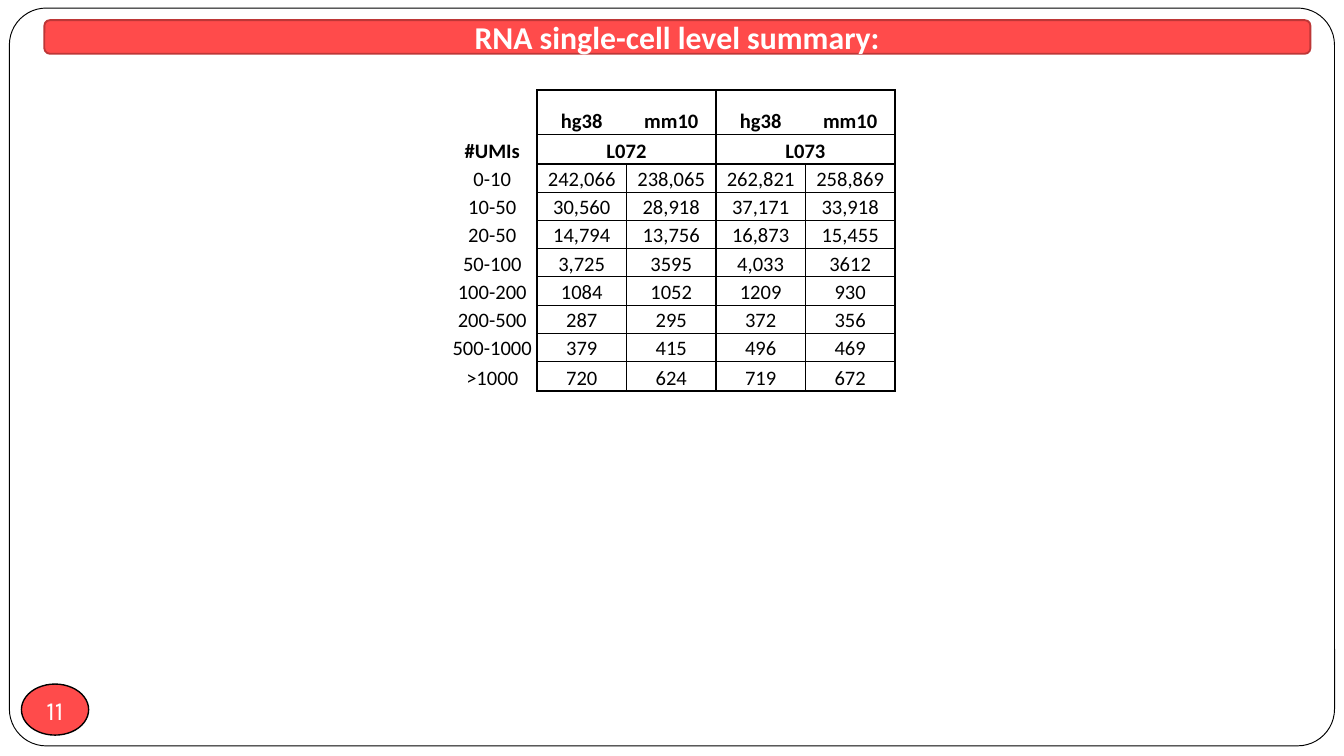
"""Build a slide that tabulates cell counts by number of RNA UMIs."""
import pptx
import pptx.dml.color
import pptx.enum.shapes
import pptx.enum.text
import pptx.oxml
import pptx.oxml.ns
import pptx.util

Inches = pptx.util.Inches
Pt = pptx.util.Pt
Shape = pptx.enum.shapes.MSO_SHAPE
Anchor = pptx.enum.text.MSO_ANCHOR

COLORS = {"white": "FFFFFF", "black": "000000", "red": "FF4B4B", "dark_red": "BD3737"}
PLAIN_TABLE_STYLE = "{2D5ABB26-0587-4C30-8999-92F81FD0307C}"
THICK, THIN = 1, 0.5
GENOMES = ["hg38", "mm10"]
ROWS = [
    ["", *GENOMES, *GENOMES],
    ["#UMIs", "L072", "", "L073", ""],
    ["0-10", "242,066", "238,065", "262,821", "258,869"],
    ["10-50", "30,560", "28,918", "37,171", "33,918"],
    ["20-50", "14,794", "13,756", "16,873", "15,455"],
    ["50-100", "3,725", "3595", "4,033", "3612"],
    ["100-200", "1084", "1052", "1209", "930"],
    ["200-500", "287", "295", "372", "356"],
    ["500-1000", "379", "415", "496", "469"],
    [">1000", "720", "624", "719", "672"],
]
LIBRARY_ROW = 1
HEADER_ROWS = 2
LIBRARY_COLUMNS = [1, 3]
ROW_HEIGHTS = [0.33, 0.22] + [0.21] * 7 + [0.22]


def rgb(name):
    return pptx.dml.color.RGBColor.from_string(COLORS[name])


def write_text(text_frame, text, size=11, font="Calibri", color="black", bold=False):
    paragraph = text_frame.paragraphs[0]
    paragraph.alignment = pptx.enum.text.PP_ALIGN.CENTER
    run = paragraph.add_run()
    run.text = text
    run.font.size = Pt(size)
    run.font.name = font
    run.font.bold = bold
    run.font.color.rgb = rgb(color)


def add_box(slide, preset, left, top, width, height, fill, line, line_width):
    shape = slide.shapes.add_shape(
        preset, Inches(left), Inches(top), Inches(width), Inches(height))
    shape.shadow.inherit = False
    shape.fill.solid()
    shape.fill.fore_color.rgb = rgb(fill)
    shape.line.color.rgb = rgb(line)
    shape.line.width = Pt(line_width)
    shape.text_frame.vertical_anchor = Anchor.MIDDLE
    return shape


def add_frame(slide):
    frame = add_box(slide, Shape.ROUNDED_RECTANGLE, 0.07, 0.06, 9.86, 5.49,
                    "white", "black", 0.5)
    frame.adjustments[0] = 0.05


def add_page_number(slide, number):
    badge = add_box(slide, Shape.OVAL, 0.16, 5.09, 0.5, 0.38, "red", "black", 0.75)
    text_frame = badge.text_frame
    text_frame.margin_left = text_frame.margin_right = 0
    text_frame.margin_top = text_frame.margin_bottom = 0
    text_frame.word_wrap = False
    write_text(text_frame, number, size=14, font="Karla", color="white")


def add_title(slide, text):
    banner = add_box(slide, Shape.ROUNDED_RECTANGLE, 0.33, 0.15, 9.42, 0.25,
                     "red", "dark_red", 1)
    write_text(banner.text_frame, text, size=17, color="white", bold=True)


def border_widths(row, column):
    """Return the left, right, top and bottom line widths of a cell, 0 for none."""
    if column == 0:
        return 0, THICK, 0, 0
    if row == LIBRARY_ROW:
        return THICK, THICK, THICK, THICK
    inner = THIN if row >= HEADER_ROWS else 0
    starts_library = column in LIBRARY_COLUMNS
    left = THICK if starts_library else inner
    right = inner if starts_library else THICK
    top = THICK if row <= HEADER_ROWS else THIN
    bottom = THICK if row < HEADER_ROWS or row == len(ROWS) - 1 else THIN
    return left, right, top, bottom


def set_borders(cell, widths):
    properties = cell._tc.get_or_add_tcPr()
    for side, width in zip("LRTB", widths):
        paint = (f'<a:solidFill><a:srgbClr val="{COLORS["black"]}"/></a:solidFill>'
                 if width else "<a:noFill/>")
        properties.append(pptx.oxml.parse_xml(
            f'<a:ln{side} {pptx.oxml.ns.nsdecls("a")} w="{Pt(width)}">{paint}</a:ln{side}>'))


def fill_cell(cell, text, row, column):
    cell.margin_left = cell.margin_right = cell.margin_top = Inches(0.01)
    cell.margin_bottom = 0
    cell.vertical_anchor = Anchor.BOTTOM
    set_borders(cell, border_widths(row, column))
    cell.fill.background()
    if text:
        write_text(cell.text_frame, text, bold=row < HEADER_ROWS)


def add_count_table(slide):
    column_count = len(ROWS[0])
    width = Inches(3.33)
    table = slide.shapes.add_table(
        len(ROWS), column_count, Inches(3.33), Inches(0.67), width,
        Inches(sum(ROW_HEIGHTS))).table
    table.first_row = table.horz_banding = False
    table._tbl.tblPr.find(pptx.oxml.ns.qn("a:tableStyleId")).text = PLAIN_TABLE_STYLE
    for column in table.columns:
        column.width = width // column_count
    for row, height in zip(table.rows, ROW_HEIGHTS):
        row.height = Inches(height)
    for column in LIBRARY_COLUMNS:
        table.cell(LIBRARY_ROW, column).merge(table.cell(LIBRARY_ROW, column + 1))
    for row, values in enumerate(ROWS):
        for column, text in enumerate(values):
            fill_cell(table.cell(row, column), text, row, column)


def main():
    presentation = pptx.Presentation()
    presentation.slide_width = Inches(10)
    presentation.slide_height = Inches(10) * 9 // 16
    slide = presentation.slides.add_slide(presentation.slide_layouts[6])
    add_frame(slide)
    add_page_number(slide, "11")
    add_title(slide, "RNA single-cell level summary:")
    add_count_table(slide)
    presentation.save("out.pptx")


if __name__ == "__main__":
    main()
